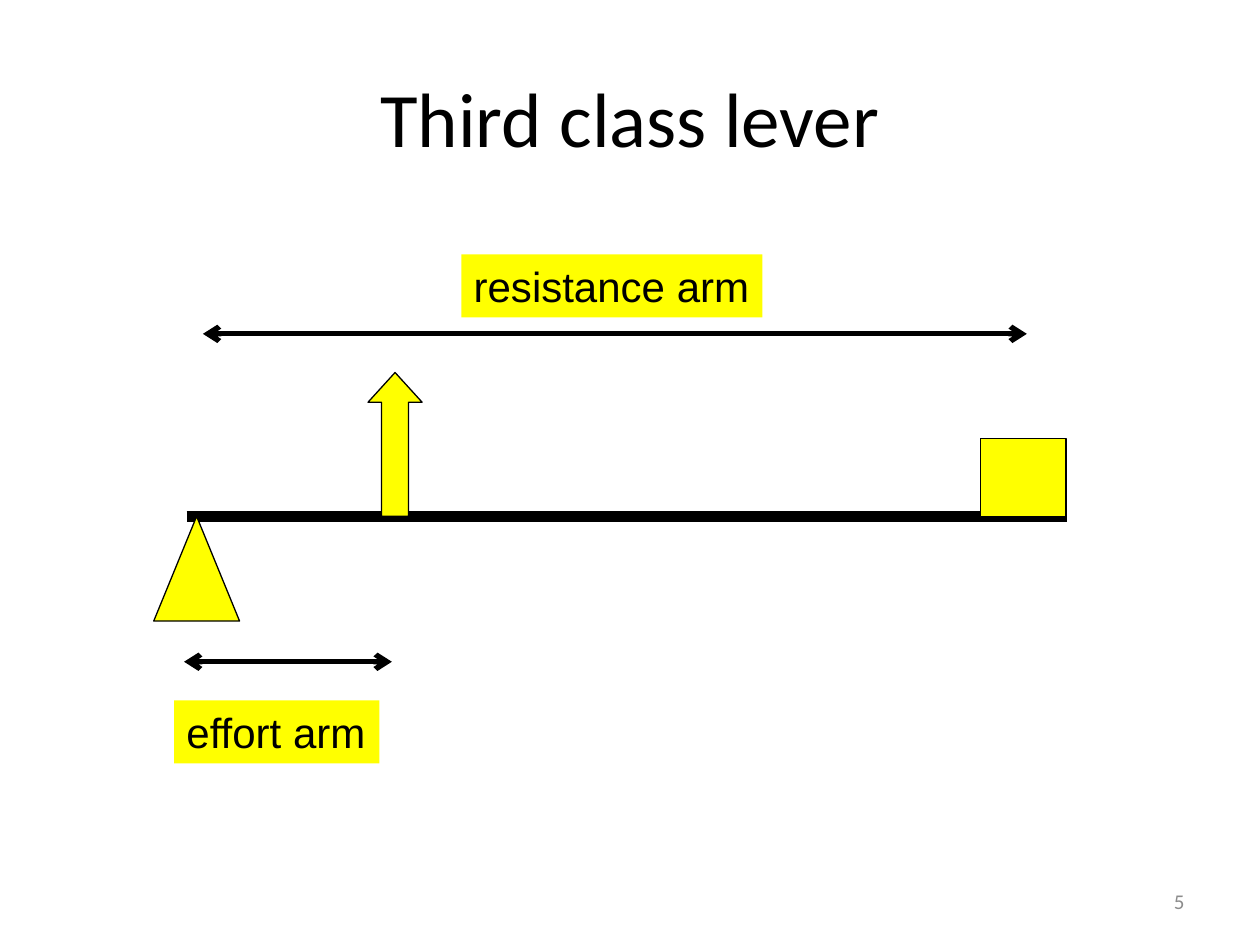
from lxml.etree import SubElement
from pptx import Presentation
from pptx.dml.color import RGBColor
from pptx.enum.shapes import MSO_CONNECTOR, MSO_SHAPE
from pptx.enum.text import MSO_ANCHOR, MSO_AUTO_SIZE, PP_ALIGN
from pptx.oxml.ns import qn
from pptx.util import Cm, Pt

BLACK = RGBColor(0x00, 0x00, 0x00)
YELLOW = RGBColor(0xFF, 0xFF, 0x00)
GRAY = RGBColor(0x8C, 0x8C, 0x8C)


class LeverSlide:
    """Holds the style and the slide; all lengths are in centimetres."""

    heading_font = "Calibri"
    label_font = "Arial"
    outline = Pt(0.75)

    def __init__(self, slide):
        self.slide = slide

    def add_text(self, words, left, top, width, height, size, align,
                 font=heading_font, color=BLACK):
        box = self.slide.shapes.add_textbox(Cm(left), Cm(top), Cm(width), Cm(height))
        frame = box.text_frame
        frame.text = words
        frame.word_wrap = True
        frame.vertical_anchor = MSO_ANCHOR.MIDDLE
        paragraph = frame.paragraphs[0]
        paragraph.alignment = align
        run_font = paragraph.runs[0].font
        run_font.name = font
        run_font.size = Pt(size)
        run_font.color.rgb = color
        return box

    def add_label(self, words, left, top, width):
        box = self.add_text(words, left, top, width, 1.27, 24, PP_ALIGN.LEFT,
                            self.label_font)
        box.fill.solid()
        box.fill.fore_color.rgb = YELLOW
        box.text_frame.word_wrap = False
        box.text_frame.vertical_anchor = MSO_ANCHOR.TOP
        box.text_frame.auto_size = MSO_AUTO_SIZE.SHAPE_TO_FIT_TEXT

    def add_figure(self, preset, left, top, width, height):
        shape = self.slide.shapes.add_shape(preset, Cm(left), Cm(top),
                                            Cm(width), Cm(height))
        shape.shadow.inherit = False
        shape.fill.solid()
        shape.fill.fore_color.rgb = YELLOW
        shape.line.color.rgb = BLACK
        shape.line.width = self.outline
        return shape

    def add_bar(self, start, end, y, weight):
        bar = self.slide.shapes.add_connector(MSO_CONNECTOR.STRAIGHT, Cm(start),
                                              Cm(y), Cm(end), Cm(y))
        bar.line.color.rgb = BLACK
        bar.line.width = Pt(weight)
        SubElement(bar._element.spPr, qn("a:effectLst"))
        return bar

    def add_span(self, start, end, y):
        bar = self.add_bar(start, end, y, 3)
        outline = bar._element.spPr.find(qn("a:ln"))
        for tip in ("a:headEnd", "a:tailEnd"):
            SubElement(outline, qn(tip), type="arrow")


def main():
    prs = Presentation()
    prs.slide_width, prs.slide_height = Cm(25.4), Cm(19.05)
    lever = LeverSlide(prs.slides.add_slide(prs.slide_layouts[6]))

    # Title and slide number
    lever.add_text("Third class lever", 1.27, 0.76, 22.86, 3.18, 44, PP_ALIGN.CENTER)
    lever.add_text("5", 18.21, 17.65, 5.92, 1.02, 12, PP_ALIGN.RIGHT, color=GRAY)

    # Lever: beam, fulcrum, effort and load, all meeting at the beam
    beam_y = 10.41
    effort_height, load_height = 2.9, 1.57
    lever.add_bar(3.76, 21.51, beam_y, 6)
    lever.add_figure(MSO_SHAPE.ISOSCELES_TRIANGLE, 3.1, beam_y, 1.73, 2.11)
    effort = lever.add_figure(MSO_SHAPE.UP_ARROW, 7.42, beam_y - effort_height,
                              1.09, effort_height)
    effort.adjustments[1] = 0.55
    lever.add_figure(MSO_SHAPE.RECTANGLE, 19.76, beam_y - load_height,
                     1.73, load_height)

    # Arm lengths
    lever.add_span(3.71, 7.9, 13.34)
    lever.add_span(4.09, 20.7, 6.73)
    lever.add_label("effort arm", 3.51, 14.12, 4.14)
    lever.add_label("resistance arm", 9.3, 5.13, 6.07)

    prs.save("out.pptx")


if __name__ == "__main__":
    main()
